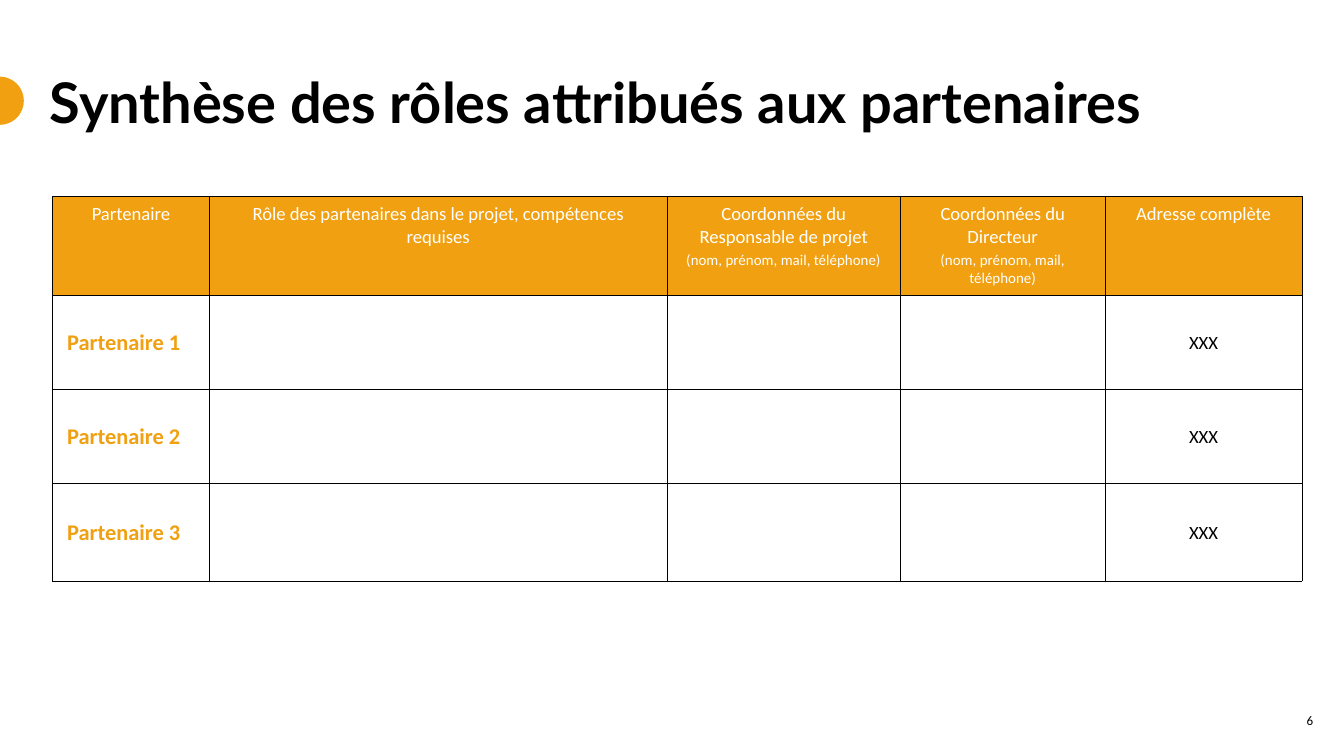
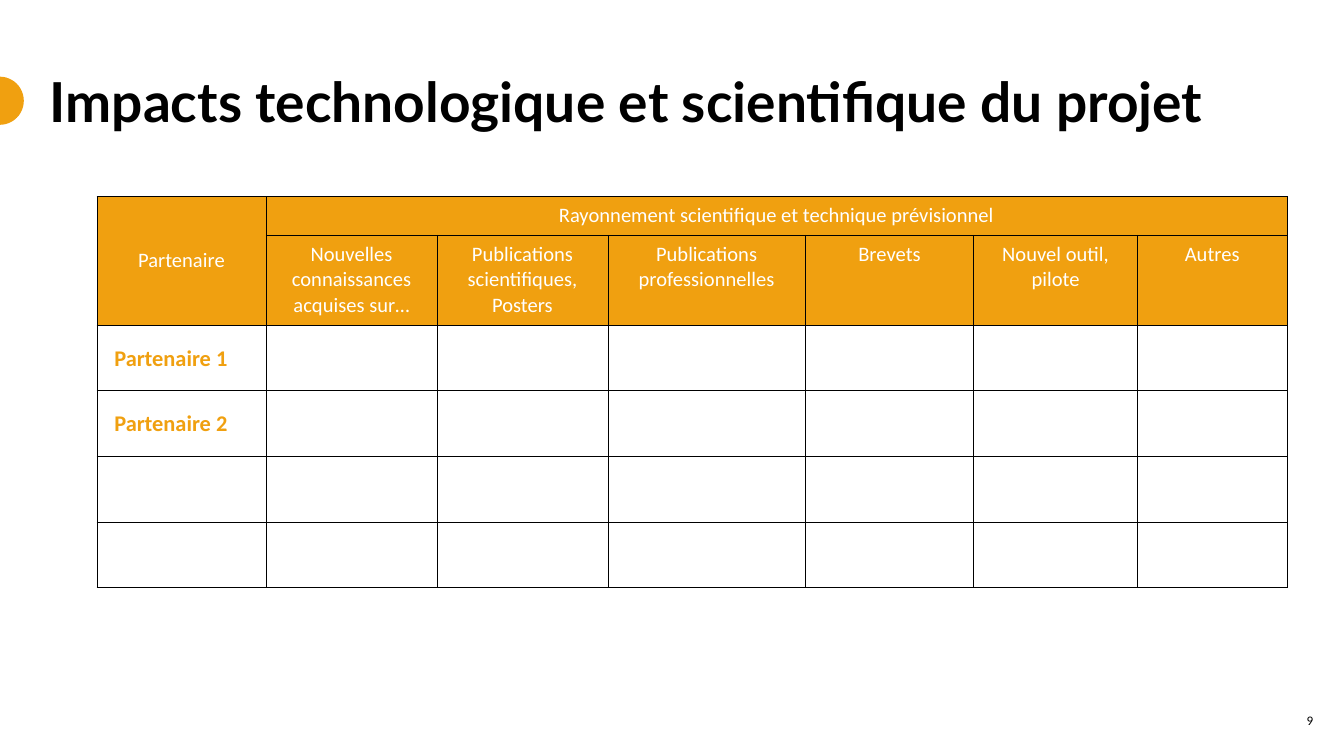
"""Build two partner table slides: assigned roles and project impacts."""
from pptx import Presentation
from pptx.dml.color import RGBColor
from pptx.enum.shapes import MSO_SHAPE as Shape
from pptx.enum.text import MSO_ANCHOR as Anchor, MSO_AUTO_SIZE as AutoSize, PP_ALIGN as Align
from pptx.oxml import parse_xml
from pptx.oxml.ns import nsdecls
from pptx.util import Cm, Pt

ORANGE = RGBColor(0xF0, 0xA0, 0x10)
BLACK = RGBColor(0, 0, 0)
WHITE = RGBColor(0xFF, 0xFF, 0xFF)
TITLE_FONT = "Lato"
BODY_FONT = "Calibri"
TITLE_ONLY = 5


class SlideBuilder:
    """Holds the style and the current slide."""

    def __init__(self, deck):
        self.deck = deck
        self.page = None

    def style(self, para, size, color, bold=False, align=Align.LEFT, name=BODY_FONT):
        para.alignment = align
        font = para.font
        font.name, font.size, font.bold = name, Pt(size), bold
        font.color.rgb = color

    def frame(self, box, text, anchor):
        frame = box.text_frame
        frame.word_wrap = True
        frame.auto_size = AutoSize.NONE
        frame.vertical_anchor = anchor
        frame.margin_left = frame.margin_right = Cm(0.18)
        frame.margin_top = frame.margin_bottom = Cm(0.1)
        frame.text = text
        return frame.paragraphs[0]

    def start(self, title, number, size, width):
        self.page = self.deck.slides.add_slide(self.deck.slide_layouts[TITLE_ONLY])
        self.dot()
        self.title(title, size, width)
        self.number(number)

    def dot(self):
        dot = self.page.shapes.add_shape(Shape.OVAL, Cm(-0.46), Cm(1.45), Cm(0.91), Cm(0.91))
        dot.shadow.inherit = False
        dot.fill.solid()
        dot.fill.fore_color.rgb = ORANGE
        dot.line.fill.background()

    def title(self, text, size, width):
        box = self.page.shapes.title
        box.left, box.top, box.width, box.height = Cm(0.76), Cm(1.32), Cm(width), Cm(1.57)
        para = self.frame(box, text, Anchor.TOP)
        para.line_spacing = 0.9
        self.style(para, size, BLACK, bold=True, name=TITLE_FONT)

    def number(self, number):
        box = self.page.shapes.add_textbox(Cm(23.65), Cm(13.23), Cm(1.35), Cm(0.76))
        para = self.frame(box, str(number), Anchor.MIDDLE)
        self.style(para, 7, BLACK, align=Align.RIGHT)

    def table(self, left, widths, heights):
        table = self.page.shapes.add_table(
            len(heights), len(widths), Cm(left), Cm(3.71), Cm(sum(widths)), Cm(sum(heights))
        ).table
        table.first_row = table.horz_banding = False
        for column, width in zip(table.columns, widths):
            column.width = Cm(width)
        for row, height in zip(table.rows, heights):
            row.height = Cm(height)
        for cell in table.iter_cells():
            self.borders(cell)
            cell.fill.background()
        return table

    def borders(self, cell):
        properties = cell._tc.get_or_add_tcPr()
        for side in ("lnL", "lnR", "lnT", "lnB"):
            properties.append(parse_xml(
                f'<a:{side} {nsdecls("a")} w="{Pt(0.25)}"><a:solidFill>'
                f'<a:srgbClr val="{BLACK}"/></a:solidFill></a:{side}>'
            ))

    def header(self, cell, text, size, note="", anchor=Anchor.TOP):
        cell.fill.solid()
        cell.fill.fore_color.rgb = ORANGE
        cell.vertical_anchor = anchor
        cell.text = text
        self.style(cell.text_frame.paragraphs[0], size, WHITE, align=Align.CENTER)
        if note:
            para = cell.text_frame.add_paragraph()
            para.text = note
            para.space_before = Pt(1.6)
            self.style(para, 8, WHITE, align=Align.CENTER)

    def body(self, cell, text):
        cell.vertical_anchor = Anchor.MIDDLE
        cell.margin_left = cell.margin_right = cell.margin_top = Cm(0.03)
        cell.margin_bottom = 0
        cell.text = text
        return cell.text_frame.paragraphs[0]

    def partner(self, cell, rank, indent):
        para = self.body(cell, f"Partenaire {rank}")
        para._p.get_or_add_pPr().set("marL", str(Cm(indent)))
        self.style(para, 12, ORANGE, bold=True)

    def value(self, cell, text):
        self.style(self.body(cell, text), 10, BLACK, align=Align.CENTER)


def add_roles(builder):
    builder.start("Synthèse des rôles attribués aux partenaires", 6, 30, 23.85)
    table = builder.table(0.99, [2.97, 8.64, 4.42, 3.86, 3.73], [1.87, 1.78, 1.78, 1.84])
    contact = "(nom, prénom, mail, téléphone)"
    headings = [
        ("Partenaire", ""),
        ("Rôle des partenaires dans le projet, compétences requises", ""),
        ("Coordonnées du Responsable de projet", contact),
        ("Coordonnées du Directeur", contact),
        ("Adresse complète", ""),
    ]
    for column, (text, note) in enumerate(headings):
        builder.header(table.cell(0, column), text, 10, note)
    for rank in range(1, 4):
        builder.partner(table.cell(rank, 0), rank, 0.25)
        builder.value(table.cell(rank, 4), "XXX")


def add_impacts(builder):
    builder.start("Impacts technologique et scientifique du projet", 9, 29.5, 25.35)
    widths = [3.2, 3.23, 3.23, 3.73, 3.18, 3.1, 2.82]
    table = builder.table(1.83, widths, [0.72, 1.7] + [1.24] * 4)
    table.cell(0, 0).merge(table.cell(1, 0))
    table.cell(0, 1).merge(table.cell(0, 6))
    builder.header(table.cell(0, 0), "Partenaire", 11, anchor=Anchor.MIDDLE)
    builder.header(table.cell(0, 1), "Rayonnement scientifique et technique prévisionnel", 11)
    headings = [
        "Nouvelles connaissances acquises sur…",
        "Publications scientifiques, Posters",
        "Publications professionnelles",
        "Brevets",
        "Nouvel outil, pilote",
        "Autres",
    ]
    for column, text in enumerate(headings, 1):
        builder.header(table.cell(1, column), text, 11)
    for rank in (1, 2):
        builder.partner(table.cell(rank + 1, 0), rank, 0.3)


def main():
    deck = Presentation()
    deck.slide_width, deck.slide_height = Cm(25.4), Cm(14.29)
    builder = SlideBuilder(deck)
    add_roles(builder)
    add_impacts(builder)
    deck.save("out.pptx")


if __name__ == "__main__":
    main()
